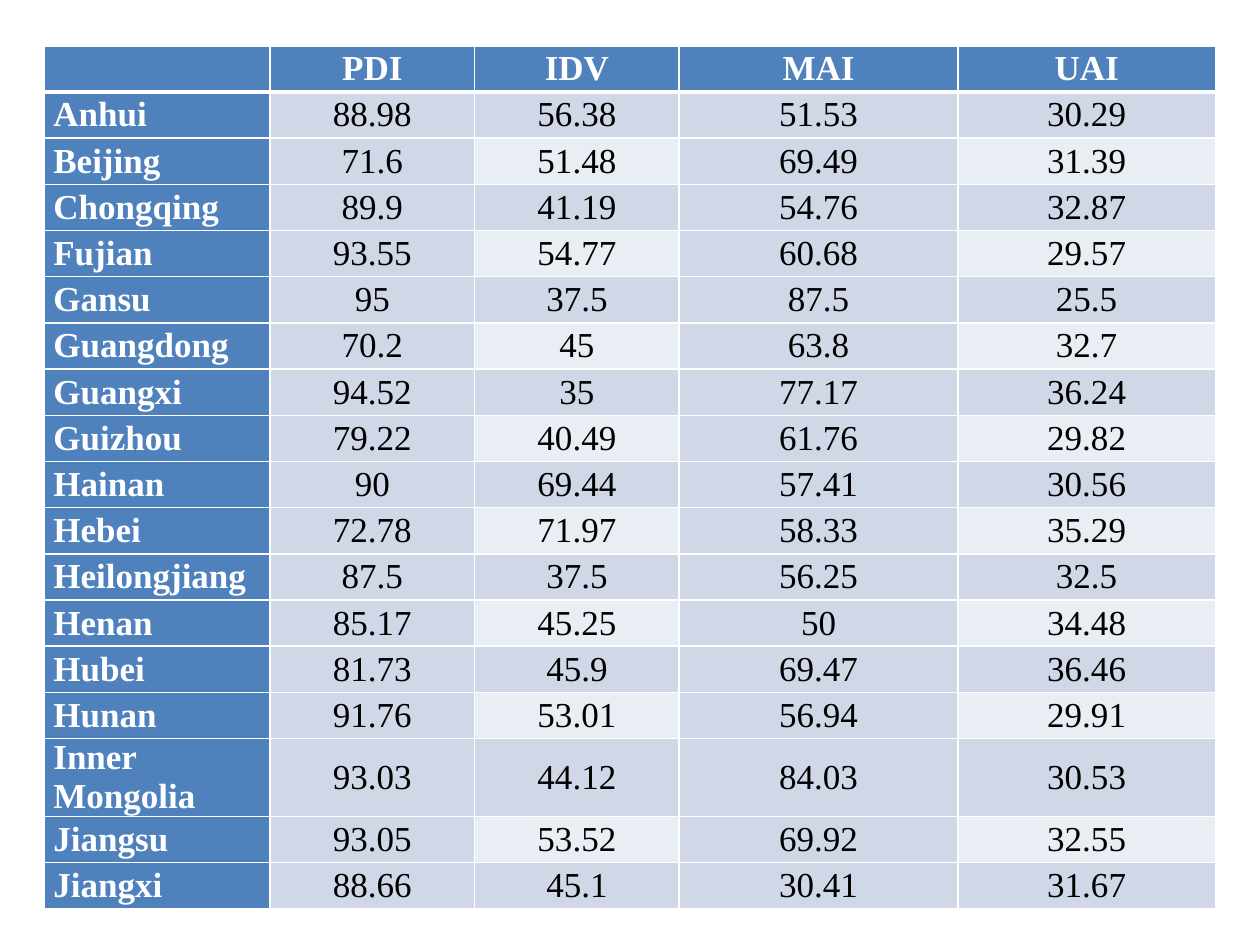
"""Build a slide with a table of PDI, IDV, MAI and UAI scores by Chinese province."""
import pptx
import pptx.dml.color
import pptx.enum.text
import pptx.oxml.ns
import pptx.util
from lxml import etree

Pt = pptx.util.Pt
ALIGN = pptx.enum.text.PP_ALIGN
COLORS = {"head": "4F81BD", "band": "D0D8E8", "light": "E9EDF4",
          "white": "FFFFFF", "black": "000000"}
COLUMN_WIDTHS = [128.8, 117, 116.8, 159.4, 147]
ROW_HEIGHT = 26.4
HEADER = ["", "PDI", "IDV", "MAI", "UAI"]
SCORES = [
    ("Anhui", 88.98, 56.38, 51.53, 30.29),
    ("Beijing", 71.6, 51.48, 69.49, 31.39),
    ("Chongqing", 89.9, 41.19, 54.76, 32.87),
    ("Fujian", 93.55, 54.77, 60.68, 29.57),
    ("Gansu", 95, 37.5, 87.5, 25.5),
    ("Guangdong", 70.2, 45, 63.8, 32.7),
    ("Guangxi", 94.52, 35, 77.17, 36.24),
    ("Guizhou", 79.22, 40.49, 61.76, 29.82),
    ("Hainan", 90, 69.44, 57.41, 30.56),
    ("Hebei", 72.78, 71.97, 58.33, 35.29),
    ("Heilongjiang", 87.5, 37.5, 56.25, 32.5),
    ("Henan", 85.17, 45.25, 50, 34.48),
    ("Hubei", 81.73, 45.9, 69.47, 36.46),
    ("Hunan", 91.76, 53.01, 56.94, 29.91),
    ("Inner Mongolia", 93.03, 44.12, 84.03, 30.53),
    ("Jiangsu", 93.05, 53.52, 69.92, 32.55),
    ("Jiangxi", 88.66, 45.1, 30.41, 31.67),
]


def rgb(name):
    return pptx.dml.color.RGBColor.from_string(COLORS[name])


def write_text(tf, text, font="Times New Roman", size=20, color="black",
               bold=False, align=ALIGN.CENTER):
    p = tf.paragraphs[0]
    p.alignment = align
    if text:
        r = p.add_run()
        r.text = text
        r.font.name = font
        r.font.size = Pt(size)
        r.font.bold = bold
        r.font.color.rgb = rgb(color)


class SlideBuilder:
    def __init__(self, prs):
        self.s = prs.slides.add_slide(prs.slide_layouts[6])
        self.border = "white"
        self.inset = 5

    def borders(self, cell, widths):
        qn = pptx.oxml.ns.qn
        props = cell._tc.get_or_add_tcPr()
        for side, width in widths.items():
            line = etree.SubElement(props, qn(f"a:ln{side}"), w=str(Pt(width)))
            fill = etree.SubElement(line, qn("a:solidFill"))
            etree.SubElement(fill, qn("a:srgbClr"), val=COLORS[self.border])

    def cell(self, cell, text, fill, widths, **text_format):
        self.borders(cell, widths)
        cell.fill.solid()
        cell.fill.fore_color.rgb = rgb(fill)
        cell.margin_left = cell.margin_right = Pt(self.inset)
        cell.margin_top = cell.margin_bottom = 0
        cell.vertical_anchor = pptx.enum.text.MSO_ANCHOR.MIDDLE
        write_text(cell.text_frame, text, **text_format)

    def table(self, left, top, rows):
        sp = self.s.shapes.add_table(
            len(rows), len(COLUMN_WIDTHS), Pt(left), Pt(top),
            Pt(sum(COLUMN_WIDTHS)), Pt(ROW_HEIGHT * len(rows)))
        table = sp.table
        for column, width in zip(table.columns, COLUMN_WIDTHS):
            column.width = Pt(width)
        for i, row in enumerate(rows):
            table.rows[i].height = Pt(ROW_HEIGHT)
            widths = {"L": 1, "R": 1, "T": 3 if i == 1 else 1,
                      "B": 3 if i == 0 else 1}
            for j, value in enumerate(row):
                if i == 0 or j == 0:
                    fill = "head"
                    text_format = {"color": "white", "bold": True}
                    if i > 0:
                        text_format["align"] = ALIGN.JUSTIFY
                else:
                    fill = "light" if i % 2 == 0 and j % 2 == 0 else "band"
                    text_format = {}
                self.cell(table.cell(i, j), str(value), fill, widths, **text_format)


def main():
    prs = pptx.Presentation()
    prs.slide_width, prs.slide_height = Pt(720), Pt(540)
    SlideBuilder(prs).table(25.5, 26.2, [HEADER, *SCORES])
    prs.save("out.pptx")


if __name__ == "__main__":
    main()
